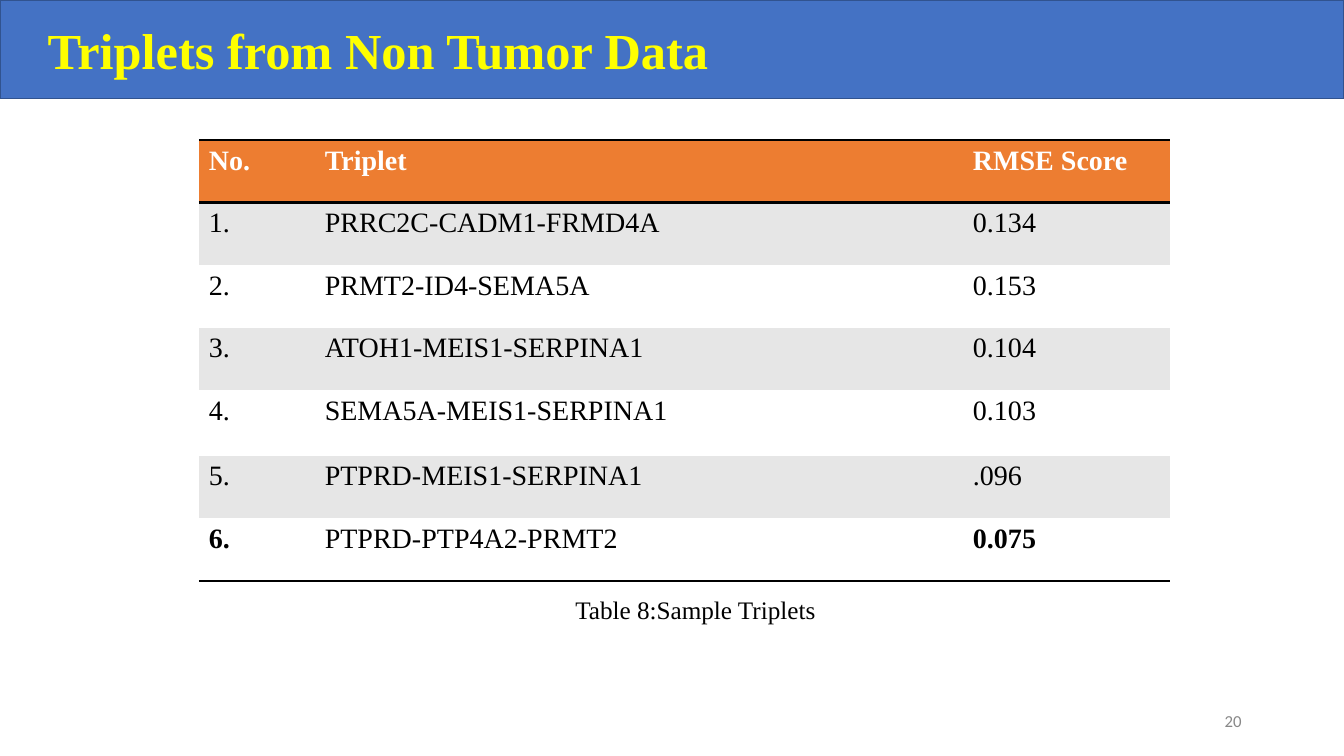
from lxml.etree import SubElement
from pptx import Presentation
from pptx.dml.color import RGBColor
from pptx.enum.text import MSO_ANCHOR as Anchor, MSO_AUTO_SIZE as AutoSize, PP_ALIGN as Align
from pptx.oxml.ns import qn
from pptx.util import Pt

# Content
TITLE = "Triplets from Non Tumor Data"
TRIPLETS = [
    ("No.", "Triplet", "RMSE Score"),
    ("1.", "PRRC2C-CADM1-FRMD4A", "0.134"),
    ("2.", "PRMT2-ID4-SEMA5A", "0.153"),
    ("3.", "ATOH1-MEIS1-SERPINA1", "0.104"),
    ("4.", "SEMA5A-MEIS1-SERPINA1", "0.103"),
    ("5.", "PTPRD-MEIS1-SERPINA1", ".096"),
    ("6.", "PTPRD-PTP4A2-PRMT2", "0.075"),
]
CAPTION = "Table 8:Sample Triplets"
PAGE = "20"

# Look
SERIF, SANS = "Times New Roman", "Calibri"
BLUE = RGBColor(0x44, 0x72, 0xC4)
DARK_BLUE = RGBColor(0x31, 0x53, 0x8F)
YELLOW = RGBColor(0xFF, 0xFF, 0x00)
ORANGE = RGBColor(0xED, 0x7D, 0x31)
BAND = RGBColor(0xE6, 0xE6, 0xE6)
WHITE = RGBColor(0xFF, 0xFF, 0xFF)
BLACK = RGBColor(0, 0, 0)
GRAY = RGBColor(0x88, 0x88, 0x88)
NO_STYLE = "{2D5ABB26-0587-4C30-8999-92F81FD0307C}"

# Sizes in points
SLIDE_W, SLIDE_H = 960, 540
TABLE_LEFT, TABLE_TOP = 142, 100
COLUMNS = (82.8, 463, 147.6)
ROWS = (44.7, 44.7, 44.7, 44.7, 46.8, 44.7, 44.7)


def write(frame, text, size, color, align, font=SERIF, bold=False):
    frame.text = text
    line = frame.paragraphs[0]
    line.alignment = align
    line.font.name, line.font.size, line.font.bold = font, Pt(size), bold
    line.font.color.rgb = color


def add_label(slide, box, *style, **more):
    frame = slide.shapes.add_textbox(*map(Pt, box)).text_frame
    frame.word_wrap = True
    write(frame, *style, **more)
    return frame


def add_rule(cell, side):
    edge = SubElement(cell._tc.get_or_add_tcPr(), qn(f"a:{side}"), w=str(Pt(2)))
    SubElement(SubElement(edge, qn("a:solidFill")), qn("a:srgbClr"), val=str(BLACK))


def add_banner(slide):
    banner = slide.shapes.title
    banner.left, banner.top, banner.width, banner.height = map(Pt, (0, 0, SLIDE_W, 70.5))
    banner.fill.solid()
    banner.fill.fore_color.rgb = BLUE
    banner.line.color.rgb = DARK_BLUE
    banner.line.width = Pt(1)
    frame = banner.text_frame
    frame.auto_size = AutoSize.NONE
    frame.vertical_anchor = Anchor.MIDDLE
    frame.margin_left = Pt(34)
    write(frame, TITLE, 36, YELLOW, Align.LEFT, bold=True)


def add_triplets(slide):
    frame = slide.shapes.add_table(
        len(ROWS), len(COLUMNS),
        *map(Pt, (TABLE_LEFT, TABLE_TOP, sum(COLUMNS), sum(ROWS))))
    table = frame.table
    table._tbl.tblPr.find(qn("a:tableStyleId")).text = NO_STYLE
    for column, width in zip(table.columns, COLUMNS):
        column.width = Pt(width)
    last = len(ROWS) - 1
    for r, height in enumerate(ROWS):
        table.rows[r].height = Pt(height)
        for c, text in enumerate(TRIPLETS[r]):
            cell = table.cell(r, c)
            header = r == 0
            # Rules around the header and under the last row
            if header:
                add_rule(cell, "lnT")
            if r in (0, last):
                add_rule(cell, "lnB")
            cell.fill.solid()
            cell.fill.fore_color.rgb = ORANGE if header else BAND if r % 2 else WHITE
            # The best triplet has its number and score in bold
            bold = header or (r == last and c != 1)
            write(cell.text_frame, text, 20, WHITE if header else BLACK,
                  Align.JUSTIFY, bold=bold)


def main():
    deck = Presentation()
    deck.slide_width, deck.slide_height = Pt(SLIDE_W), Pt(SLIDE_H)
    slide = deck.slides.add_slide(deck.slide_layouts[5])  # Title Only
    add_banner(slide)
    add_triplets(slide)
    add_label(slide, (399.6, 421.2, 194.4, 29), CAPTION, 18, BLACK, Align.CENTER)
    page = add_label(slide, (678, 500.5, 216, 28.8), PAGE, 12, GRAY, Align.RIGHT, font=SANS)
    page.vertical_anchor = Anchor.MIDDLE
    deck.save("out.pptx")


if __name__ == "__main__":
    main()
